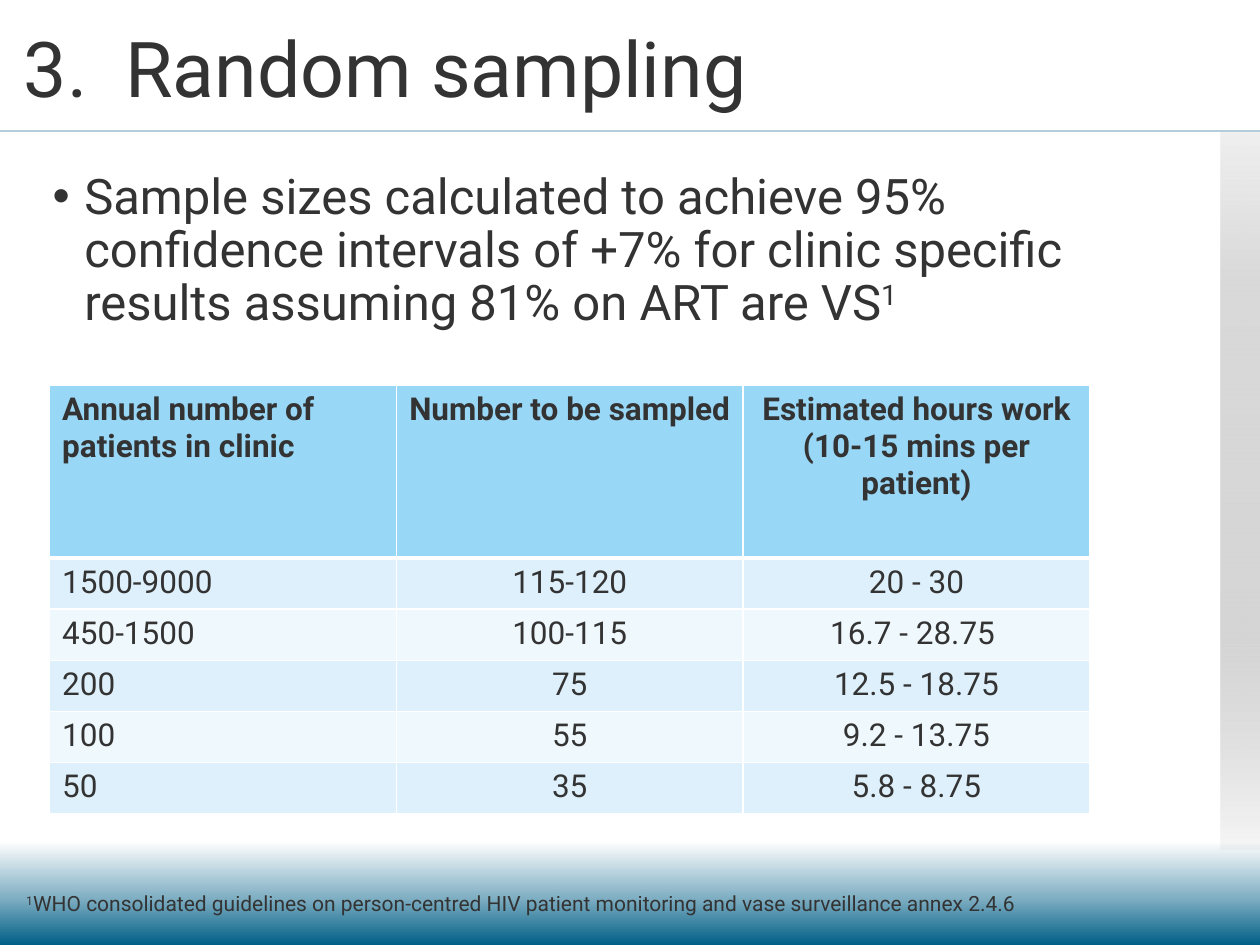
from dataclasses import dataclass
from typing import Any

from lxml import etree
from pptx import Presentation
from pptx import util as u
from pptx.dml.color import RGBColor
from pptx.enum import shapes, text
from pptx.oxml import ns

INK, BLUE, WHITE = "333333", "005F86", "FFFFFF"
HEADER_FILL, BAND_FILLS = "99D7F6", ("DEF0FB", "EFF8FD")
SUPERSCRIPT = 30000


@dataclass
class Stop:
    position: int
    color: str
    opacity: int = 100


@dataclass
class Run:
    words: str
    baseline: int = 0


@dataclass
class TextBlock:
    left: float
    top: float
    width: float
    height: float
    size: int
    runs: list[Run]
    spacing: float = 1.0
    anchor: Any = text.MSO_ANCHOR.TOP
    bullet: bool = False


def rgb(value: str) -> RGBColor:
    return RGBColor.from_string(value)


def add_node(parent: Any, tag: str, **attrs: Any) -> Any:
    return etree.SubElement(parent, ns.qn(tag), {k: str(v) for k, v in attrs.items()})


def add_color(parent: Any, color: str, opacity: int = 100) -> None:
    node = add_node(parent, "a:srgbClr", val=color)
    if opacity < 100:
        add_node(node, "a:alpha", val=opacity * 1000)


def fill_downward(fill: Any, owner: Any, stops: list[Stop]) -> None:
    """Give a fill a top-to-bottom gradient."""
    fill.gradient()
    grad = next(owner.iter(ns.qn("a:gradFill")))
    for child in list(grad):
        grad.remove(child)
    stop_list = add_node(grad, "a:gsLst")
    for stop in stops:
        node = add_node(stop_list, "a:gs", pos=stop.position * 1000)
        add_color(node, stop.color, stop.opacity)
    add_node(grad, "a:lin", ang=5400000, scaled=0)


def add_run(p: Any, run: Run, size: int, bold: bool = False) -> None:
    r = p.add_run()
    r.text = run.words
    for name, value in {"name": "Roboto", "size": u.Pt(size), "bold": bold}.items():
        setattr(r.font, name, value)
    r.font.color.rgb = rgb(INK)
    if run.baseline:
        r.font._element.set("baseline", str(run.baseline))


def add_text(s: Any, block: TextBlock) -> None:
    box = (block.left, block.top, block.width, block.height)
    tf = s.shapes.add_textbox(*map(u.Cm, box)).text_frame
    for name, value in {"word_wrap": True, "vertical_anchor": block.anchor}.items():
        setattr(tf, name, value)
    p = tf.paragraphs[0]
    if block.bullet:
        props = p._p.get_or_add_pPr()
        indent = u.Cm(0.64)
        props.set("marL", str(indent))
        props.set("indent", str(-indent))
        add_node(props, "a:buFont", typeface="Arial")
        add_node(props, "a:buChar", char="•")
    p.line_spacing = block.spacing
    for run in block.runs:
        add_run(p, run, block.size)


def set_borders(cell: Any, widths: dict[str, int]) -> None:
    props = cell._tc.get_or_add_tcPr()
    for side in ("L", "R", "T", "B"):
        line = add_node(props, f"a:ln{side}", w=u.Pt(widths.get(side, 1)))
        add_color(add_node(line, "a:solidFill"), WHITE)


def add_sample_table(s: Any, rows: list[tuple[str, ...]]) -> None:
    column, header, body = u.Cm(6.99), u.Cm(3.48), u.Cm(1.03)
    heights = [header] + [body] * (len(rows) - 1)
    table = s.shapes.add_table(len(rows), len(rows[0]), u.Cm(1), u.Cm(7.77),
                               column * len(rows[0]), sum(heights)).table
    for col in table.columns:
        col.width = column
    for i, (values, height) in enumerate(zip(rows, heights)):
        table.rows[i].height = height
        fill = BAND_FILLS[(i - 1) % 2] if i else HEADER_FILL
        widths = {0: {"B": 3}, 1: {"T": 3}}.get(i, {})
        for j, value in enumerate(values):
            cell = table.cell(i, j)
            set_borders(cell, widths)
            cell.fill.solid()
            cell.fill.fore_color.rgb = rgb(fill)
            p = cell.text_frame.paragraphs[0]
            p.alignment = text.PP_ALIGN.CENTER if j else text.PP_ALIGN.LEFT
            add_run(p, Run(value), 18, bold=i == 0)


def add_title_rule(s: Any) -> None:
    rule = s.shapes.add_connector(shapes.MSO_CONNECTOR.STRAIGHT,
                                  u.Cm(0), u.Cm(2.64), u.Cm(25.4), u.Cm(2.64))
    rule.line.width = u.Pt(1)
    rule.line.color.rgb = rgb(BLUE)
    add_node(next(rule.element.iter(ns.qn("a:srgbClr"))), "a:alpha", val=30000)
    add_node(rule.element.spPr, "a:effectLst")


def add_side_band(s: Any) -> None:
    band = s.shapes.add_shape(shapes.MSO_SHAPE.RECTANGLE,
                              u.Cm(24.61), u.Cm(2.67), u.Cm(0.79), u.Cm(14.45))
    band.shadow.inherit = False
    band.line.fill.background()
    fill_downward(band.fill, band.element, [
        Stop(0, "D9D9D9", 40), Stop(21, "D9D9D9"),
        Stop(70, "D5D5D5"), Stop(100, "BFBFBF", 13)])


TEXTS = [
    TextBlock(0.23, 0, 20.73, 2.92, 44, [Run("3.  Random sampling")],
              spacing=0.9, anchor=text.MSO_ANCHOR.MIDDLE),
    TextBlock(0.81, 3.35, 21.89, 4.14, 28,
              [Run("Sample sizes calculated to achieve 95% confidence intervals of +7% "
                   "for clinic specific results assuming 81% on ART are VS"),
               Run("1", SUPERSCRIPT)],
              spacing=0.9, bullet=True),
    TextBlock(0.28, 17.83, 22.96, 0.76, 12,
              [Run("1", SUPERSCRIPT),
               Run("WHO consolidated guidelines on person-centred HIV patient "
                   "monitoring and vase surveillance annex 2.4.6")]),
]

SAMPLE_ROWS = [
    ("Annual number of patients in clinic", "Number to be sampled",
     "Estimated hours work (10-15 mins per patient)"),
    ("1500-9000", "115-120", "20 - 30"),
    ("450-1500", "100-115", "16.7 - 28.75 "),
    ("200", "75", "12.5 - 18.75"),
    ("100", "55", "9.2 - 13.75"),
    ("50", "35", "5.8 - 8.75"),
]


def main() -> None:
    prs = Presentation()
    prs.slide_width, prs.slide_height = u.Cm(25.4), u.Cm(19.05)
    s = prs.slides.add_slide(prs.slide_layouts[6])

    # Backdrop
    fill_downward(s.background.fill, s.element,
                  [Stop(89, WHITE), Stop(95, "80AFC3"), Stop(100, BLUE)])
    add_title_rule(s)
    add_side_band(s)

    # Title, bullet and footnote
    for block in TEXTS:
        add_text(s, block)

    # Sample sizes
    add_sample_table(s, SAMPLE_ROWS)

    prs.save("out.pptx")


if __name__ == "__main__":
    main()
